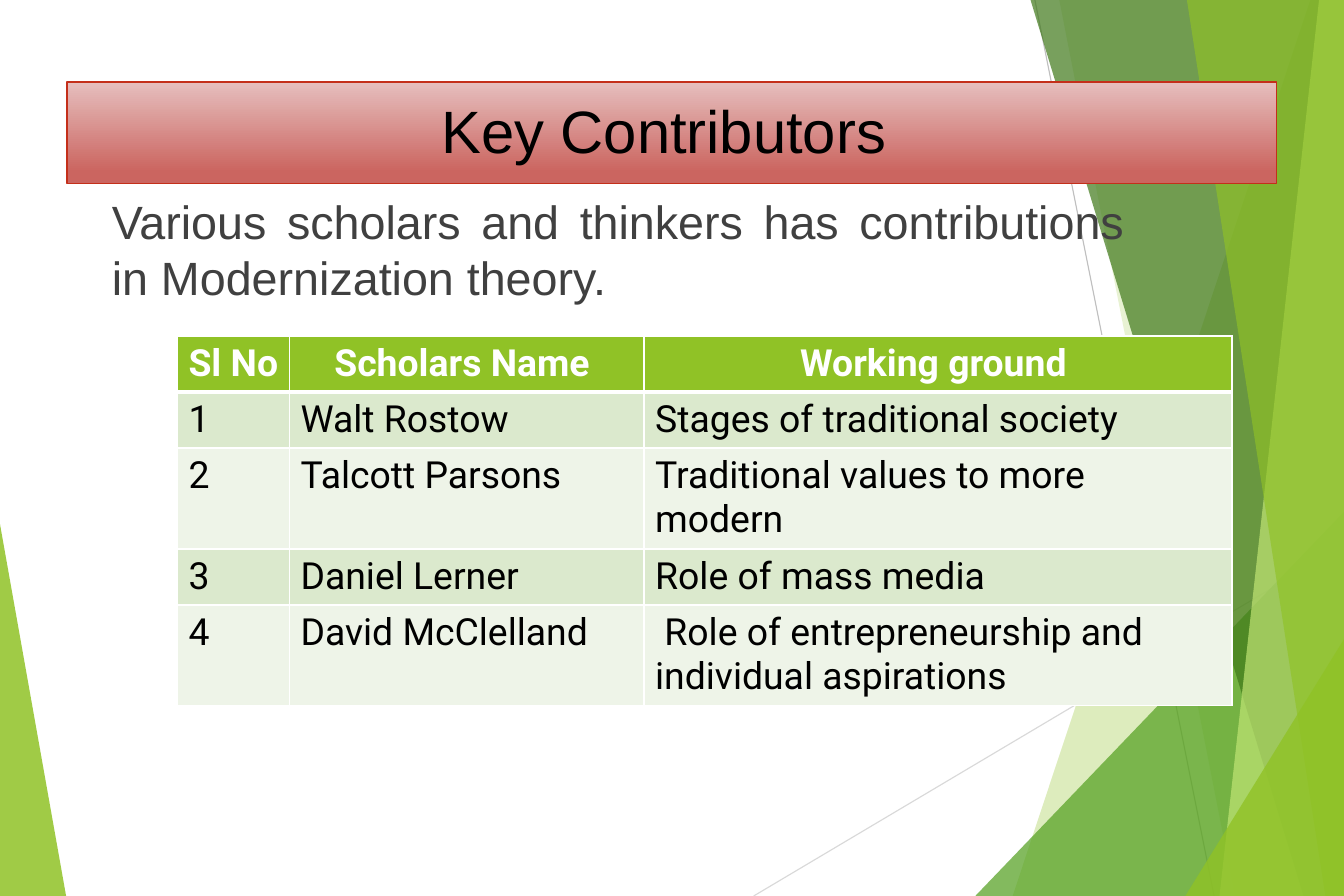
import pptx
import pptx.dml.color
import pptx.enum.shapes
import pptx.enum.text
import pptx.oxml
import pptx.oxml.ns
import pptx.util

Pt = pptx.util.Pt
ALIGN = pptx.enum.text.PP_ALIGN
W, H = 864, 576
GREEN, WHITE, BLACK = "90C226", "FFFFFF", "000000"


def rgb(value):
    return pptx.dml.color.RGBColor.from_string(value)


def add_xml(parent, tag, body=""):
    ns = pptx.oxml.ns.nsdecls("a")
    name = tag.split()[0]
    parent.append(pptx.oxml.parse_xml(f"<a:{tag} {ns}>{body}</a:{name}>"))


class Deck:
    """Style and current slide."""
    heading_font = "Arial"
    table_font = "Roboto"

    def __init__(self):
        self.prs = pptx.Presentation()
        self.prs.slide_width, self.prs.slide_height = Pt(W), Pt(H)
        self.slide = self.prs.slides.add_slide(self.prs.slide_layouts[6])
        self.shapes = self.slide.shapes

    def facet(self, points, color, opacity):
        pts = [(Pt(x), Pt(y)) for x, y in points]
        fb = self.shapes.build_freeform(*pts[0], scale=1.0)
        fb.add_line_segments(pts[1:], close=True)
        sp = fb.convert_to_shape()
        sp.shadow.inherit = False
        sp.fill.solid()
        sp.fill.fore_color.rgb = rgb(color)
        clr = sp._element.spPr.find(".//" + pptx.oxml.ns.qn("a:srgbClr"))
        add_xml(clr, f'alpha val="{opacity * 1000}"')
        sp.line.fill.background()

    def line(self, x1, y1, x2, y2, color):
        kind = pptx.enum.shapes.MSO_CONNECTOR.STRAIGHT
        cn = self.shapes.add_connector(kind, Pt(x1), Pt(y1), Pt(x2), Pt(y2))
        cn.line.color.rgb = rgb(color)
        cn.line.width = Pt(0.75)
        add_xml(cn._element.spPr, "effectLst")

    def text(self, tf, text, size, color, font, align, bold=False):
        tf.word_wrap = True
        p = tf.paragraphs[0]
        p.alignment = align
        r = p.add_run()
        r.text = text
        r.font.name, r.font.size, r.font.bold = font, Pt(size), bold
        r.font.color.rgb = rgb(color)
        return p

    def banner(self, x, y, w, h, text):
        kind = pptx.enum.shapes.MSO_SHAPE.RECTANGLE
        sp = self.shapes.add_shape(kind, Pt(x), Pt(y), Pt(w), Pt(h))
        sp.shadow.inherit = False
        sp.fill.gradient()
        sp.fill.gradient_angle = 270
        stops = ((0, "E6BFBE"), (0.88, "CB6560"))
        for stop, (pos, color) in zip(sp.fill.gradient_stops, stops):
            stop.position, stop.color.rgb = pos, rgb(color)
        sp.line.color.rgb = rgb("C42F1A")
        sp.line.width = Pt(1)
        tf = sp.text_frame
        tf.vertical_anchor = pptx.enum.text.MSO_ANCHOR.TOP
        tf.margin_top = Pt(7.8)
        self.text(tf, text, 38.4, BLACK, self.heading_font, ALIGN.CENTER)

    def body(self, x, y, w, h, text):
        tf = self.shapes.add_textbox(Pt(x), Pt(y), Pt(w), Pt(h)).text_frame
        tf.margin_top = Pt(5)
        p = self.text(tf, text, 30, "404040", self.heading_font, ALIGN.JUSTIFY)
        p.line_spacing = Pt(36)

    def borders(self, cell, **widths):
        for side in "LRTB":
            w = Pt(widths.get(side, 1))
            add_xml(cell._tc.get_or_add_tcPr(), f'ln{side} w="{w}"',
                    f'<a:solidFill><a:srgbClr val="{WHITE}"/></a:solidFill>')

    def table(self, x, y, widths, heights, rows):
        frame = self.shapes.add_table(len(rows), len(widths), Pt(x), Pt(y),
                                      Pt(sum(widths)), Pt(sum(heights)))
        tbl = frame.table
        tbl.horz_banding = False
        for col, w in zip(tbl.columns, widths):
            col.width = Pt(w)
        for i, row in enumerate(rows):
            tbl.rows[i].height = Pt(heights[i])
            head = i == 0
            fill = GREEN if head else ("EEF4E8", "DBE9CD")[i % 2]
            for j, text in enumerate(row):
                cell = tbl.cell(i, j)
                # The rule below the header is heavier
                self.borders(cell, B=3 if head else 1, T=3 if i == 1 else 1)
                cell.fill.solid()
                cell.fill.fore_color.rgb = rgb(fill)
                self.text(cell.text_frame, text, 24, WHITE if head else BLACK,
                          self.table_font,
                          ALIGN.CENTER if head else ALIGN.LEFT, head)


def main():
    deck = Deck()

    # Left wedge and thin lines
    deck.facet([(0, 337), (42.5, H), (0, H)], GREEN, 85)
    deck.line(484.5, H, W, 350.6, "D9D9D9")
    deck.line(665.3, 0, 780.5, H, "BFBFBF")

    # Right-hand facets: top x, bottom x, colour, opacity
    def band(top, bottom, color, opacity):
        deck.facet([(top, 0), (bottom, H), (W, H), (W, 0)], color, opacity)

    def corner(left, top, color, opacity):
        deck.facet([(left, H), (W, top), (W, H)], color, opacity)

    band(842.4, 651, GREEN, 30)
    band(681, 794, GREEN, 20)
    corner(627, 329, "54A021", 72)
    band(662.5, 838, "3F7819", 70)
    band(848, 784, "C0E474", 70)
    band(763, 852, GREEN, 65)
    corner(762, 411, GREEN, 80)

    # Heading and introduction
    deck.banner(43.2, 52.6, 777.6, 65.5, "Key Contributors ")
    deck.body(64.8, 118.8, 665.3, 80,
              "Various scholars and thinkers has contributions "
              "in Modernization theory.")

    # Scholars
    one, two = 35.4, 63.6
    deck.table(114, 216, [72, 228, 378], [one, one, two, one, two], [
        ("Sl No", "Scholars Name ", "Working ground "),
        ("1", "Walt Rostow", "Stages of traditional society"),
        ("2", "Talcott Parsons", "Traditional values to more modern"),
        ("3", "Daniel Lerner", "Role of mass media"),
        ("4", "David McClelland",
         " Role of entrepreneurship and individual aspirations"),
    ])
    deck.prs.save("out.pptx")


if __name__ == "__main__":
    main()
